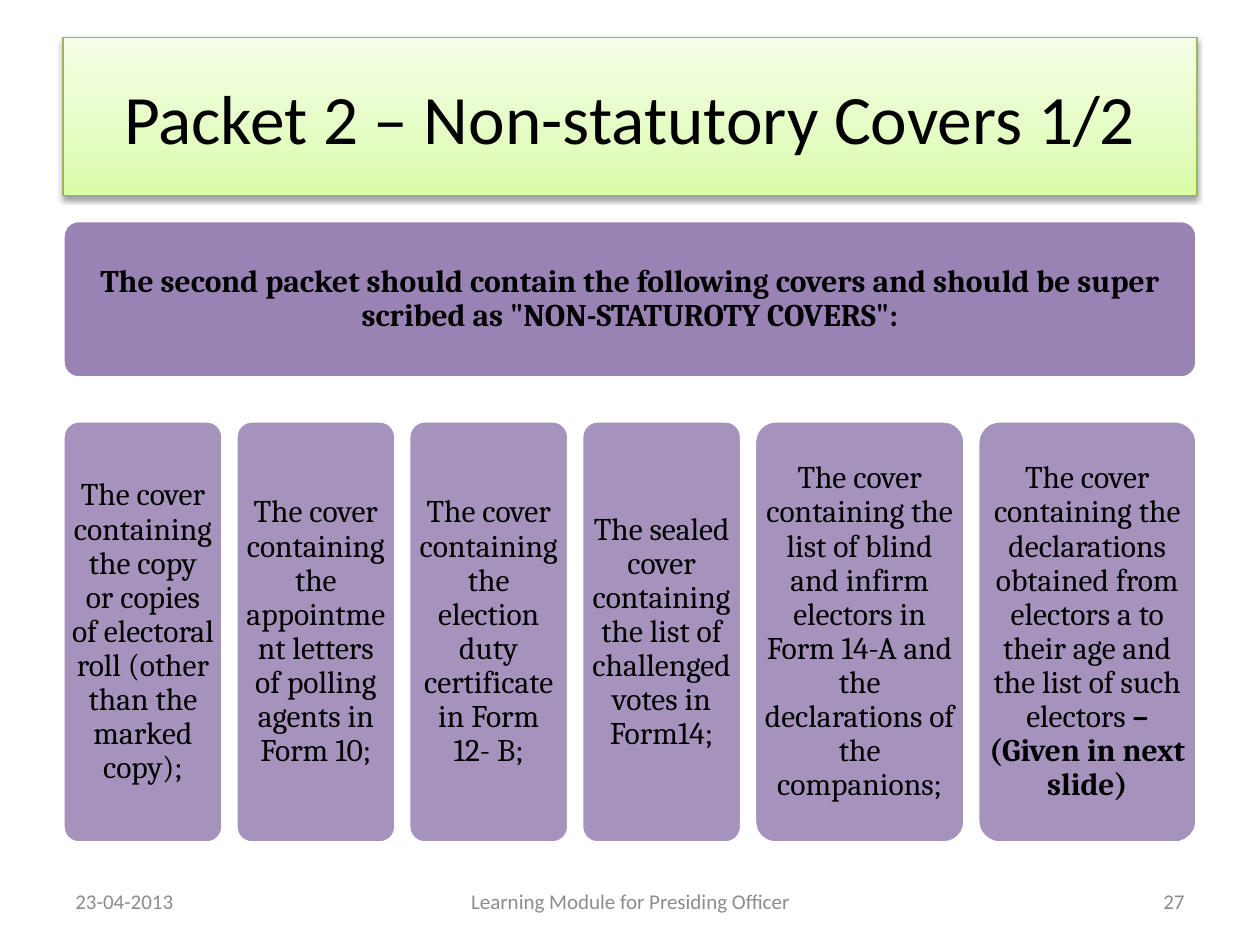
from copy import deepcopy

from lxml.etree import SubElement
from pptx import Presentation
from pptx.dml.color import RGBColor
from pptx.enum.shapes import MSO_SHAPE
from pptx.enum.text import MSO_ANCHOR, PP_ALIGN
from pptx.oxml.ns import qn
from pptx.util import Inches, Pt

COLORS = {
    "text": "000000", "footer": "8C8C8C", "purple": "8064A2", "white": "FFFFFF",
    "title_line": "98B955", "shadow": "000000",
}
TITLE_STOPS = [(0, "DAFDA7"), (0.35, "E4FCC2"), (1, "F5FFE7")]

# Text is a list of (words, bold) runs
TITLE = [("Packet 2 – Non-statutory Covers 1/2", False)]
HEADING = [("The second packet should contain the following covers and should be "
            "super scribed as \"NON-STATUROTY COVERS\":", True)]
COVERS = [  # width, runs
    (1.27, [("The cover containing the copy or copies of electoral roll "
             "(other than the marked copy);", False)]),
    (1.27, [("The cover containing the appointment letters of polling agents "
             "in Form 10;", False)]),
    (1.27, [("The cover containing the election duty certificate in Form 12- B;", False)]),
    (1.27, [("The sealed cover containing the list of challenged votes in Form14;", False)]),
    (1.67, [("The cover containing the list of blind and infirm electors in Form 14-A "
             "and the declarations of the companions;", False)]),
    (1.74, [("The cover containing the declarations obtained from electors a to their "
             "age and the list of such electors ", False),
            ("– (Given in next slide)", True)]),
]
FOOTERS = [  # left, width, alignment, words
    (0.5, 2.33, PP_ALIGN.LEFT, "23-04-2013"),
    (3.42, 3.17, PP_ALIGN.CENTER, "Learning Module for Presiding Officer"),
    (7.17, 2.33, PP_ALIGN.RIGHT, "27"),
]

LEFT, WIDTH = 0.5, 9
CORNER = 0.1
PADDING = 0.07
TITLE_FONT = {"name": "Calibri", "size": Pt(39.6)}
COVER_FONT = {"name": "Cambria", "size": Pt(18)}
FOOTER_FONT = {"name": "Calibri", "size": Pt(12)}


def rgb(name):
    return RGBColor.from_string(COLORS[name])


def write(sp, runs, font, color="text", align=PP_ALIGN.CENTER):
    tf = sp.text_frame
    tf.word_wrap = True
    tf.vertical_anchor = MSO_ANCHOR.MIDDLE
    p = tf.paragraphs[0]
    p.alignment = align
    for words, bold in runs:
        r = p.add_run()
        r.text = words
        for key, value in {**font, "bold": bold}.items():
            setattr(r.font, key, value)
        r.font.color.rgb = rgb(color)
    return tf


def add_box(s, kind, box, line, line_width):
    sp = s.shapes.add_shape(kind, *map(Inches, box))
    sp.shadow.inherit = False
    sp.line.color.rgb = rgb(line)
    sp.line.width = Pt(line_width)
    return sp


def add_alpha(color, percent):
    SubElement(color, qn("a:alpha"), val=str(percent * 1000))


def add_title(s):
    sp = add_box(s, MSO_SHAPE.RECTANGLE, (LEFT, 0.3, WIDTH, 1.25), "title_line", 0.75)
    sp.fill.gradient()
    sp.fill.gradient_angle = 90
    stop_list = sp._element.spPr.find(".//" + qn("a:gsLst"))
    stop_list.append(deepcopy(stop_list[-1]))
    for stop, (position, color) in zip(sp.fill.gradient_stops, TITLE_STOPS):
        stop.position = position
        stop.color.rgb = RGBColor.from_string(color)
    shadow = SubElement(sp._element.spPr.find(qn("a:effectLst")), qn("a:outerShdw"),
                        blurRad=str(Pt(3.1)), dist=str(Pt(1.6)), dir="5400000",
                        rotWithShape="0")
    add_alpha(SubElement(shadow, qn("a:srgbClr"), val=COLORS["shadow"]), 38)
    write(sp, TITLE, TITLE_FONT)


def add_cover(s, box, runs, opacity):
    sp = add_box(s, MSO_SHAPE.ROUNDED_RECTANGLE, box, "white", 2)
    sp.adjustments[0] = CORNER
    sp.fill.solid()
    sp.fill.fore_color.rgb = rgb("purple")
    add_alpha(sp._element.spPr.find(qn("a:solidFill"))[0], opacity)
    tf = write(sp, runs, COVER_FONT)
    tf.paragraphs[0].line_spacing = 0.9
    # A rounded rectangle already insets its text by 0.29 of the corner radius
    margin = Inches(PADDING - 0.29 * CORNER * min(box[2:]))
    for side in ("left", "right", "top", "bottom"):
        setattr(tf, f"margin_{side}", margin)


def main():
    prs = Presentation()
    prs.slide_width, prs.slide_height = Inches(10), Inches(7.5)
    s = prs.slides.add_slide(prs.slide_layouts[6])

    add_title(s)
    add_cover(s, (LEFT, 1.75, WIDTH, 1.25), HEADING, 80)

    gap = (WIDTH - sum(width for width, _ in COVERS)) / (len(COVERS) - 1)
    x = LEFT
    for width, runs in COVERS:
        add_cover(s, (x, 3.34, width, 3.35), runs, 70)
        x += width + gap

    for left, width, align, words in FOOTERS:
        sp = s.shapes.add_textbox(*map(Inches, (left, 6.95, width, 0.4)))
        write(sp, [(words, False)], FOOTER_FONT, "footer", align)

    prs.save("out.pptx")


if __name__ == "__main__":
    main()
